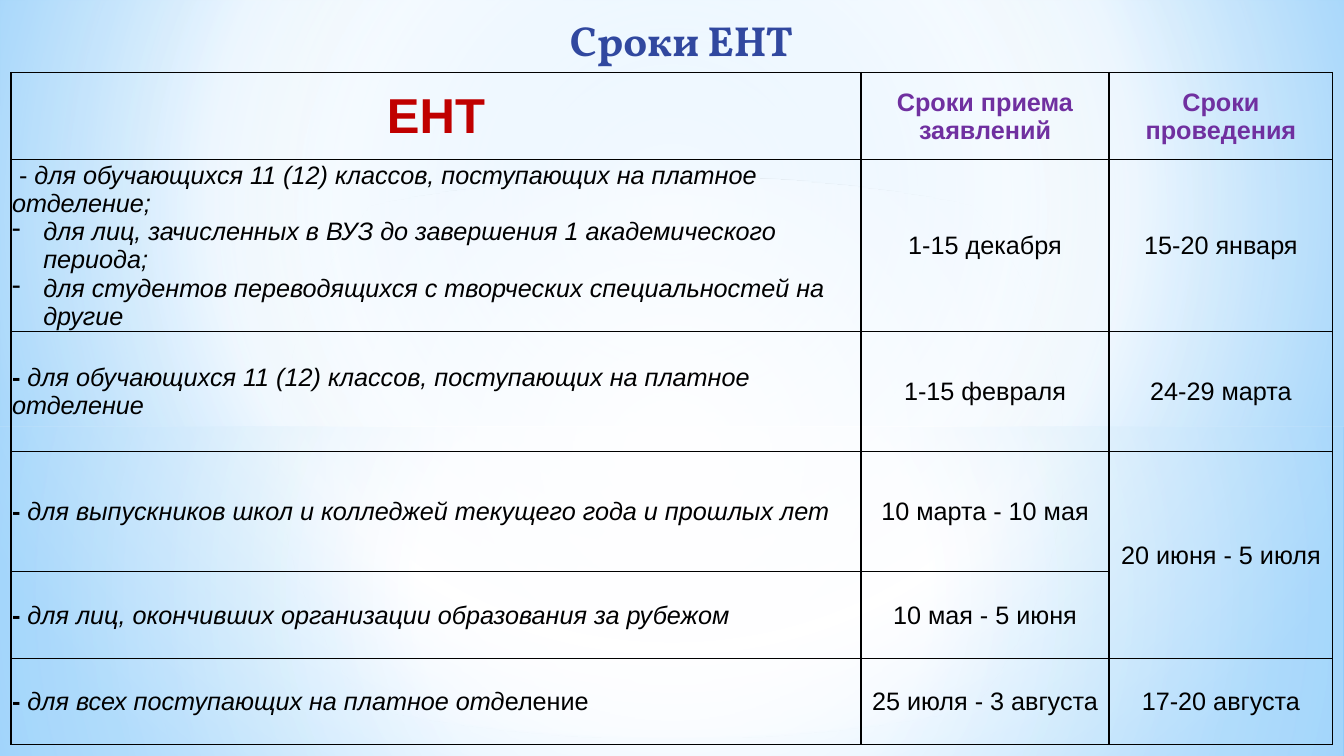
from lxml import etree
from pptx import Presentation
from pptx.dml.color import RGBColor
from pptx.enum.shapes import MSO_SHAPE
from pptx.enum.text import MSO_ANCHOR, MSO_AUTO_SIZE, PP_ALIGN
from pptx.oxml import parse_xml
from pptx.oxml.ns import qn
from pptx.util import Inches, Pt

COLORS = {"title": "31489F", "exam": "C00000", "heading": "7030A0", "text": "000000",
          "border": "000000", "white": "FFFFFF", "haze": "B4DCFA",
          "sky": "9ED5FF", "deep": "5BB9FF"}
BODY_FONT, TITLE_FONT = "Arial", "Vollkorn"
DRAWING_NS = "http://schemas.openxmlformats.org/drawingml/2006/main"
CENTER = (50, 50, 50, 50)

# Each stop: position %, colour, opacity %.
SKY_STOPS = [(0, "sky", 100), (60, "white", 100), (100, "deep", 100)]
HAZE_LAYERS = [
    (MSO_SHAPE.RECTANGLE, (0, 4.23, 13.33, 3.27), CENTER,
     [(0, "white", 91), (37, "white", 76), (100, "haze", 79)]),
    (MSO_SHAPE.RECTANGLE, (0, 0, 13.33, 4.23), CENTER,
     [(0, "white", 89), (48, "white", 62), (100, "haze", 79)]),
    (MSO_SHAPE.RECTANGLE, (0, 2.9, 13.33, 2.5), None,
     [(0, "white", 0), (29, "white", 30), (45, "haze", 40),
      (55, "white", 26), (65, "haze", 60), (100, "white", 0)]),
    (MSO_SHAPE.OVAL, (0, 1.75, 13.33, 5.58), CENTER,
     [(0, "white", 100), (54, "white", 0)]),
]

COLUMN_WIDTHS = [8.43, 2.46, 2.22]
ROW_HEIGHTS = [0.86, 1.71, 1.19, 1.19, 0.86, 0.86]
HEADINGS = ["ЕНТ", "Сроки приема заявлений", "Сроки проведения"]
# Each row: applicants as paragraphs of (text, style), application dates, exam dates.
SCHEDULE = [
    ([[(" - ", ""), ("для обучающихся 11 (12) классов, поступающих на платное отделение;", "i")],
      [("для лиц, зачисленных в ВУЗ до завершения 1 академического периода;", "i")],
      [("для студентов переводящихся с творческих специальностей на другие", "i")]],
     "1-15 декабря", "15-20 января"),
    ([[("- ", "b"), ("для обучающихся 11 (12) классов, поступающих на платное отделение", "i")]],
     "1-15 февраля", "24-29 марта"),
    ([[("- ", "b"), ("для выпускников школ и колледжей текущего года и прошлых лет", "i")]],
     "10 марта - 10 мая", "20 июня - 5 июля"),
    ([[("- ", "b"), ("для лиц, окончивших организации образования за рубежом", "i")]],
     "10 мая - 5 июня", ""),
    ([[("- ", "b"), ("для всех поступающих на платное отд", "i"), ("еление", "")]],
     "25 июля - 3 августа", "17-20 августа"),
]


def set_gradient(fill, owner, stops, focus):
    """Fill owner with a circular gradient around focus, or a vertical one without it."""
    fill.solid()
    fill.fore_color.rgb = RGBColor.from_string(COLORS["white"])
    stop_xml = "".join(
        f'<a:gs pos="{pos * 1000}"><a:srgbClr val="{COLORS[color]}">'
        f'<a:alpha val="{opacity * 1000}"/></a:srgbClr></a:gs>'
        for pos, color, opacity in stops)
    if focus:
        sides = " ".join(f'{side}="{value * 1000}"' for side, value in zip("ltrb", focus))
        direction = f'<a:path path="circle"><a:fillToRect {sides}/></a:path>'
    else:
        direction = '<a:lin ang="5400000" scaled="0"/>'
    gradient = parse_xml(f'<a:gradFill xmlns:a="{DRAWING_NS}" rotWithShape="1">'
                         f'<a:gsLst>{stop_xml}</a:gsLst>{direction}</a:gradFill>')
    solid = owner.find(qn("a:solidFill"))
    owner.replace(solid, gradient)


def style_run(run, size, color, bold=False, italic=False, font=BODY_FONT):
    run.font.name, run.font.size = font, Pt(size)
    run.font.bold, run.font.italic = bold, italic
    run.font.color.rgb = RGBColor.from_string(COLORS[color])


def add_backdrop(slide):
    sky = slide.background.fill
    sky.solid()
    set_gradient(sky, slide._element.find(".//" + qn("p:bgPr")), SKY_STOPS, (20, 10, 20, 60))
    for outline, box, focus, stops in HAZE_LAYERS:
        layer = slide.shapes.add_shape(outline, *map(Inches, box))
        layer.shadow.inherit = False
        layer.line.fill.background()
        set_gradient(layer.fill, layer._element.spPr, stops, focus)


def add_title(slide, box):
    title = slide.shapes.title
    title.left, title.top, title.width, title.height = map(Inches, box)
    slide.shapes._spTree.append(title._element)  # bring in front of the backdrop
    frame = title.text_frame
    frame.text = "Сроки ЕНТ"
    frame.vertical_anchor = MSO_ANCHOR.TOP
    frame.auto_size = MSO_AUTO_SIZE.NONE
    heading = frame.paragraphs[0]
    heading.alignment = PP_ALIGN.CENTER
    heading.space_before, heading.space_after = Pt(0), Pt(3)
    style_run(heading.runs[0], 30, "title", bold=True, font=TITLE_FONT)


def format_cell(cell):
    cell.vertical_anchor = MSO_ANCHOR.MIDDLE
    cell.margin_left = cell.margin_right = cell.margin_top = Inches(0.01)
    cell.margin_bottom = 0
    properties = cell._tc.get_or_add_tcPr()
    for side in "LRTB":
        properties.append(parse_xml(
            f'<a:ln{side} xmlns:a="{DRAWING_NS}" w="{Pt(1)}"><a:solidFill>'
            f'<a:srgbClr val="{COLORS["border"]}"/></a:solidFill></a:ln{side}>'))
    cell.fill.background()


def write_centered(cell, text, size, color, bold=False):
    cell.text_frame.text = text
    paragraph = cell.text_frame.paragraphs[0]
    paragraph.alignment = PP_ALIGN.CENTER
    for run in paragraph.runs:
        style_run(run, size, color, bold)


def write_applicants(cell, groups):
    frame = cell.text_frame
    for index, group in enumerate(groups):
        paragraph = frame.add_paragraph() if index else frame.paragraphs[0]
        for text, style in group:
            run = paragraph.add_run()
            run.text = text
            style_run(run, 18, "text", bold=style == "b", italic=style == "i")
        if index:
            properties = paragraph._p.get_or_add_pPr()
            properties.set("marL", str(Inches(0.31)))
            properties.set("indent", str(-Inches(0.31)))
            etree.SubElement(properties, qn("a:buChar")).set("char", "-")


def add_schedule(slide, box):
    table = slide.shapes.add_table(len(ROW_HEIGHTS), len(COLUMN_WIDTHS),
                                   *map(Inches, box)).table
    table.first_row = table.horz_banding = False
    for column, width in zip(table.columns, COLUMN_WIDTHS):
        column.width = Inches(width)
    for row, height in zip(table.rows, ROW_HEIGHTS):
        row.height = Inches(height)
    for cell in table.iter_cells():
        format_cell(cell)
    for column, heading in enumerate(HEADINGS):
        size, color = (18, "heading") if column else (35, "exam")
        write_centered(table.cell(0, column), heading, size, color, bold=True)
    table.cell(3, 2).merge(table.cell(4, 2))
    for row, (applicants, application_dates, exam_dates) in enumerate(SCHEDULE, start=1):
        write_applicants(table.cell(row, 0), applicants)
        write_centered(table.cell(row, 1), application_dates, 18, "text")
        if exam_dates:
            write_centered(table.cell(row, 2), exam_dates, 18, "text")


def main():
    deck = Presentation()
    deck.slide_width, deck.slide_height = Inches(13.33), Inches(7.5)
    slide = deck.slides.add_slide(deck.slide_layouts[5])
    add_backdrop(slide)
    add_title(slide, (0.66, 0.09, 12.2, 0.63))
    add_schedule(slide, (0.11, 0.72, sum(COLUMN_WIDTHS), sum(ROW_HEIGHTS)))
    deck.save("out.pptx")


if __name__ == "__main__":
    main()
